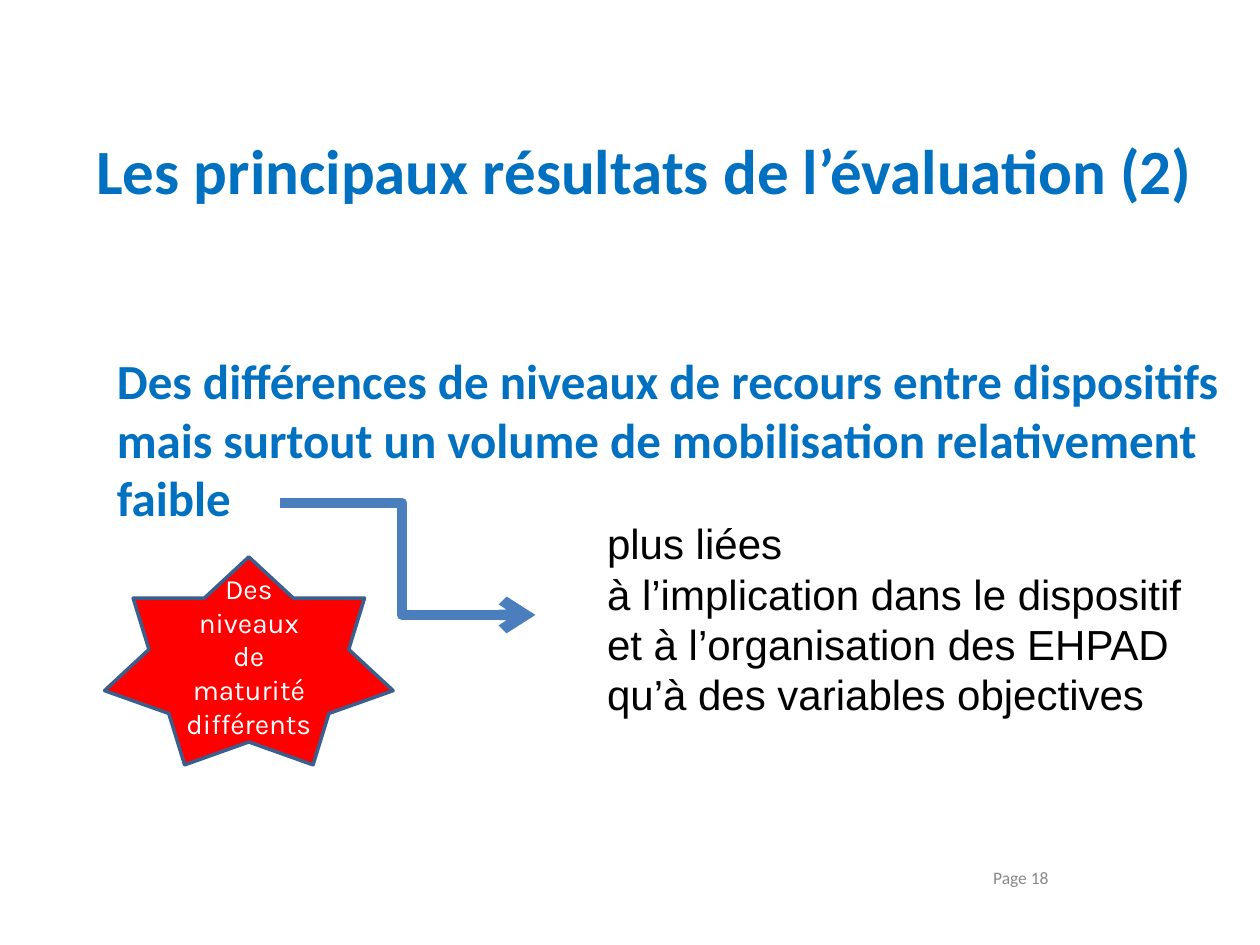
"""Build the slide on the main evaluation results."""
from pptx import Presentation
from pptx.dml.color import RGBColor
from pptx.enum.shapes import MSO_CONNECTOR, MSO_SHAPE
from pptx.enum.text import MSO_ANCHOR, PP_ALIGN
from pptx.oxml.ns import qn
from pptx.util import Inches, Pt
from lxml.etree import SubElement

COLORS = {"blue": "0070C0", "black": "000000", "grey": "898989", "white": "FFFFFF",
          "red": "FF0000", "arrow": "4B7EBC", "outline": "3A5F8C"}

TITLE = {
    "box": (0.51, 0.99, 9.21, 0.87),
    "lines": ["Les principaux résultats de l’évaluation (2)"],
    "font": {"name": "Calibri", "size": Pt(36), "bold": True},
    "color": "blue", "align": PP_ALIGN.CENTER, "anchor": MSO_ANCHOR.TOP,
}
TEXT_BOXES = [
    {
        "box": (7.28, 6.82, 1.14, 0.29),
        "lines": ["Page 18"],
        "font": {"name": "Calibri", "size": Pt(10)},
        "color": "grey", "align": PP_ALIGN.RIGHT, "anchor": MSO_ANCHOR.MIDDLE,
    },
    {
        "box": (4.72, 4.06, 5, 2.12),
        "lines": ["plus liées",
                  "à l’implication dans le dispositif et à l’organisation des EHPAD "
                  "qu’à des variables objectives"],
        "font": {"name": "Arial", "size": Pt(24)},
        "color": "black", "align": PP_ALIGN.LEFT, "anchor": MSO_ANCHOR.TOP,
    },
    {
        "box": (0.83, 2.73, 9.06, 1.51),
        "lines": ["Des différences de niveaux de recours entre dispositifs mais surtout "
                  "un volume de mobilisation relativement faible"],
        "font": {"name": "Calibri", "size": Pt(28), "bold": True},
        "color": "blue", "align": PP_ALIGN.LEFT, "anchor": MSO_ANCHOR.TOP,
    },
]
STAR = {
    "box": (0.83, 4.42, 2.29, 1.65),
    "lines": ["Des niveaux de maturité différents"],
    "font": {"name": "Karla", "size": Pt(16)},
    "color": "white", "align": PP_ALIGN.CENTER, "anchor": MSO_ANCHOR.MIDDLE,
}
ARROW = {"ends": (2.22, 3.99, 4.25, 4.88), "bend": 47800}


def rgb(name):
    return RGBColor.from_string(COLORS[name])


def inches(values):
    return [Inches(value) for value in values]


def set_line(shape, color, width):
    shape.line.color.rgb = rgb(color)
    shape.line.width = Pt(width)


def write_text(shape, content):
    frame = shape.text_frame
    frame.word_wrap = True
    frame.vertical_anchor = content["anchor"]
    frame.text = "\n".join(content["lines"])
    for paragraph in frame.paragraphs:
        paragraph.alignment = content["align"]
        for name, value in content["font"].items():
            setattr(paragraph.runs[0].font, name, value)
        paragraph.runs[0].font.color.rgb = rgb(content["color"])


def add_title(slide):
    title = slide.shapes.title
    for name, value in zip(("left", "top", "width", "height"), inches(TITLE["box"])):
        setattr(title, name, value)
    write_text(title, TITLE)


def add_arrow(slide):
    arrow = slide.shapes.add_connector(MSO_CONNECTOR.ELBOW, *inches(ARROW["ends"]))
    set_line(arrow, "arrow", 6)
    properties = arrow.element.spPr
    SubElement(properties.find(qn("a:ln")), qn("a:tailEnd"), type="arrow")
    SubElement(properties, qn("a:effectLst"))
    geometry = properties.find(qn("a:prstGeom"))
    guides = geometry.find(qn("a:avLst"))
    if guides is None:
        guides = SubElement(geometry, qn("a:avLst"))
    SubElement(guides, qn("a:gd"), name="adj1", fmla=f"val {ARROW['bend']}")


def add_star(slide):
    star = slide.shapes.add_shape(MSO_SHAPE.STAR_7_POINT, *inches(STAR["box"]))
    star.shadow.inherit = False
    star.fill.solid()
    star.fill.fore_color.rgb = rgb("red")
    set_line(star, "outline", 2)
    write_text(star, STAR)


def main():
    presentation = Presentation()
    presentation.slide_width, presentation.slide_height = inches((10, 7.5))
    slide = presentation.slides.add_slide(presentation.slide_layouts[5])
    add_title(slide)
    for content in TEXT_BOXES:
        write_text(slide.shapes.add_textbox(*inches(content["box"])), content)
    add_arrow(slide)
    add_star(slide)
    presentation.save("out.pptx")


if __name__ == "__main__":
    main()
